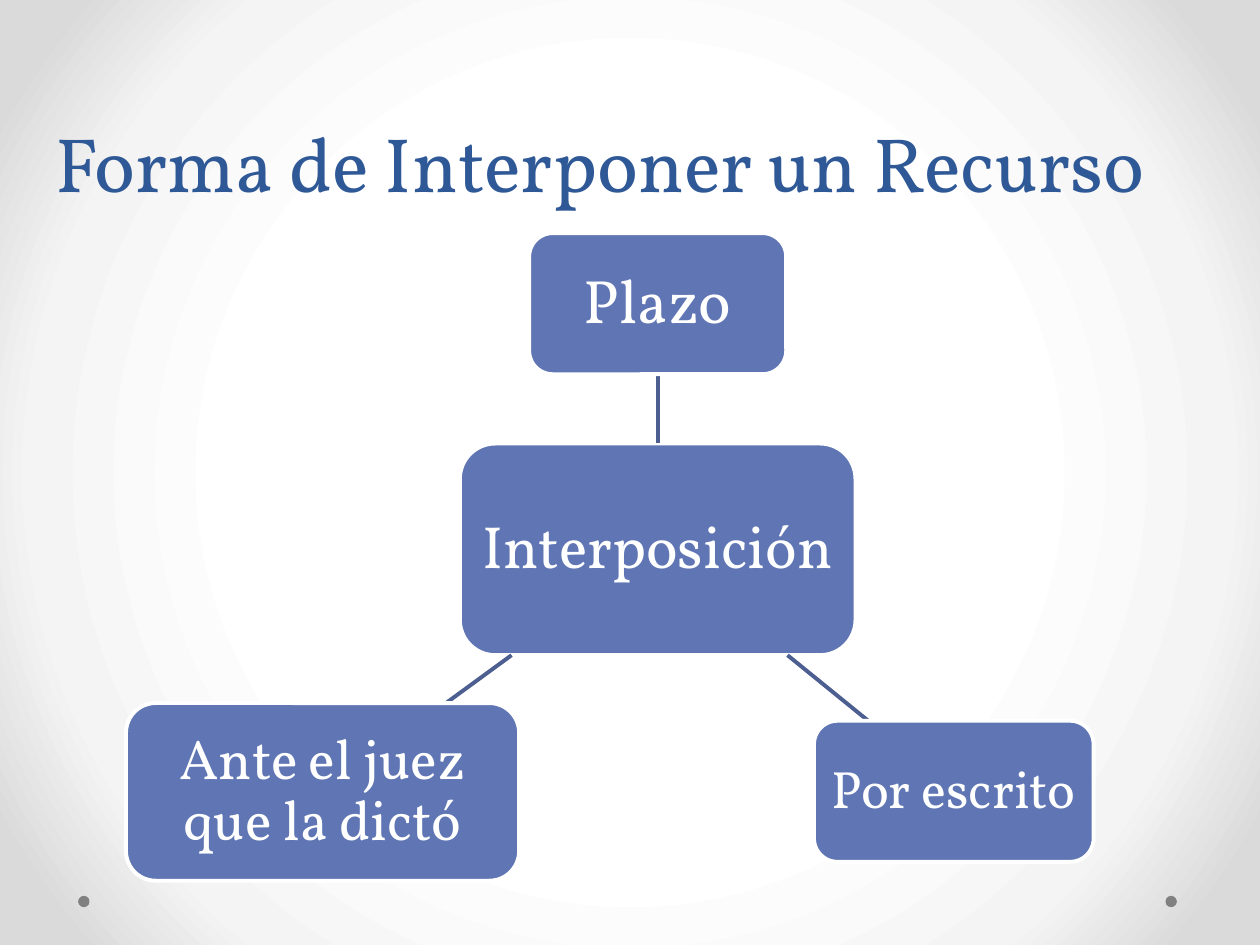
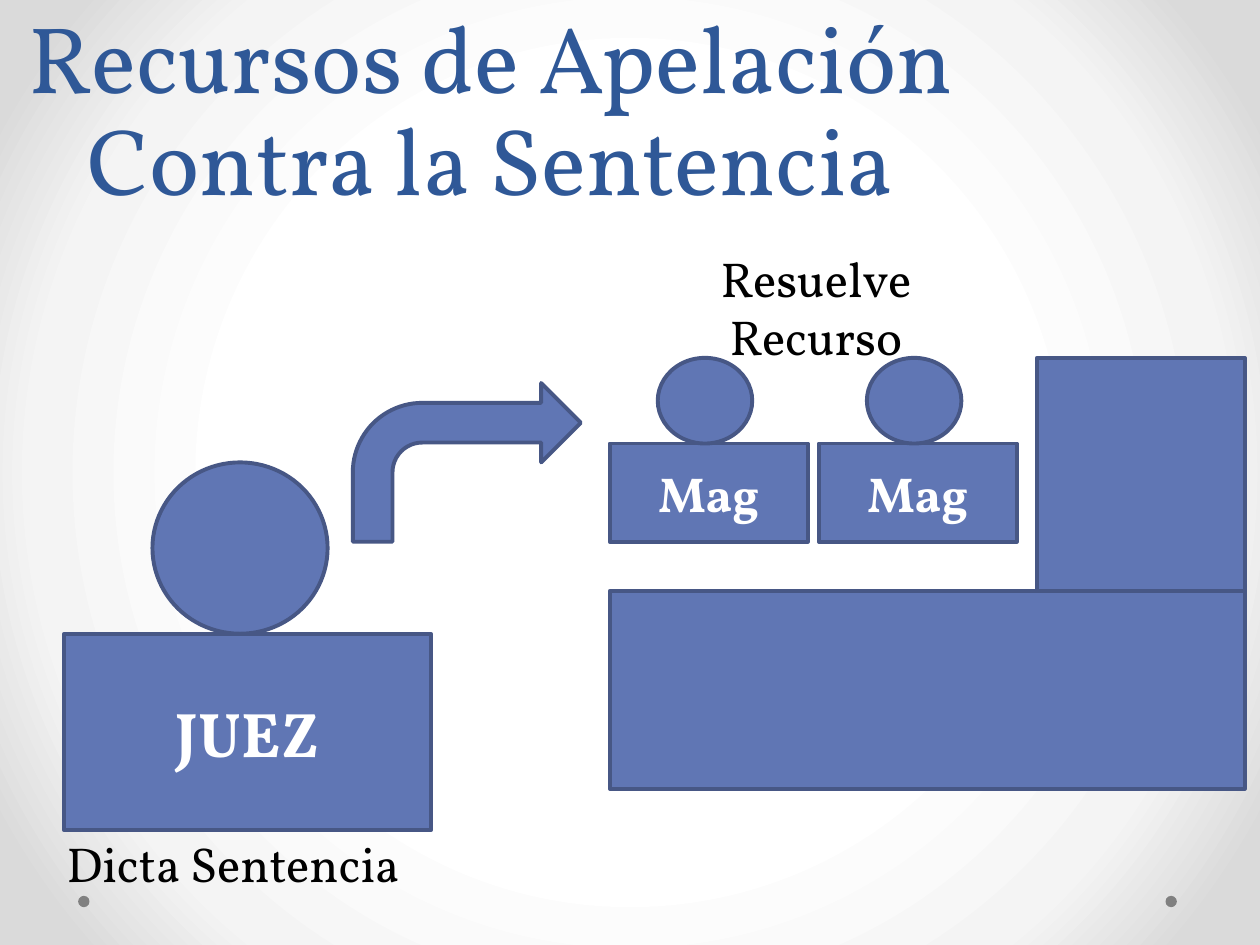
from lxml import etree
from pptx import Presentation
from pptx import util as u
from pptx.dml import color
from pptx.enum import shapes, text
from pptx.oxml import ns, parse_xml

PX = 9144
FONT = "Vollkorn"
BLUE, EDGE, LINK, TITLE = "6076B4", "475785", "4D5E90", "2F5897"
WHITE, BLACK, GREY = "FFFFFF", "000000", "808080"
GLOW = [(50, WHITE), (76, "F4F4F4"), (92, "DADADA")]
KIND = shapes.MSO_SHAPE


def px(*lengths):
    return [u.Emu(length * PX) for length in lengths]


def rgb(value):
    return color.RGBColor.from_string(value)


class Deck:
    """Holds the shared style and the slide being drawn."""

    def __init__(self):
        self.prs = Presentation()
        self.prs.slide_width, self.prs.slide_height = px(1000, 750)
        self.paint_background()

    def paint_background(self):
        fill = self.prs.slide_master.background.fill
        fill.solid()
        stops = "".join(
            f'<a:gs pos="{pos * 1000}"><a:srgbClr val="{tone}"/></a:gs>' for pos, tone in GLOW
        )
        glow = parse_xml(
            f'<a:gradFill {ns.nsdecls("a")} rotWithShape="1"><a:gsLst>{stops}</a:gsLst>'
            '<a:path path="circle"><a:fillToRect l="50000" t="50000" r="50000" b="50000"/>'
            "</a:path></a:gradFill>"
        )
        master = self.prs.slide_master.element
        solid = master.find(".//" + ns.qn("p:bgPr")).find(ns.qn("a:solidFill"))
        solid.getparent().replace(solid, glow)

    def start(self, title, box, size):
        self.slide = self.prs.slides.add_slide(self.prs.slide_layouts[5])
        for left in (62, 925):
            self.shape(KIND.OVAL, (left, 711, 9, 9), fill=GREY, edge=None)
        heading = self.slide.shapes.title
        heading.left, heading.top, heading.width, heading.height = px(*box)
        frame = heading.text_frame
        frame.auto_size = text.MSO_AUTO_SIZE.NONE
        frame.vertical_anchor = text.MSO_ANCHOR.BOTTOM
        self.label(frame, title, size, TITLE, spacing=u.Pt(58))

    def label(self, frame, words, size, tone, bold=False, spacing=None):
        frame.word_wrap = True
        paragraph = frame.paragraphs[0]
        paragraph.text = words
        paragraph.alignment = text.PP_ALIGN.CENTER
        paragraph.line_spacing = spacing
        font = paragraph.font
        font.name, font.size, font.bold = FONT, u.Pt(size), bold
        font.color.rgb = rgb(tone)

    def shape(self, kind, box, fill=BLUE, edge=EDGE):
        shape = self.slide.shapes.add_shape(kind, *px(*box))
        shape.shadow.inherit = False
        shape.fill.solid()
        shape.fill.fore_color.rgb = rgb(fill)
        if edge:
            shape.line.color.rgb = rgb(edge)
            shape.line.width = u.Pt(2.25)
        else:
            shape.line.fill.background()
        return shape

    def node(self, words, box, size):
        frame = self.shape(KIND.ROUNDED_RECTANGLE, box, edge=WHITE).text_frame
        frame.margin_left, frame.margin_top, frame.margin_right, frame.margin_bottom = px(8, 8, 8, 8)
        frame.vertical_anchor = text.MSO_ANCHOR.MIDDLE
        self.label(frame, words, size, WHITE, spacing=0.9)

    def link(self, *ends):
        link = self.slide.shapes.add_connector(shapes.MSO_CONNECTOR.STRAIGHT, *px(*ends))
        link.line.color.rgb = rgb(LINK)
        link.line.width = u.Pt(2.25)
        properties = link.element.find(ns.qn("p:spPr"))
        etree.SubElement(properties, ns.qn("a:effectLst"))

    def official(self, words, desk, head, size):
        left, top = desk[:2]
        offset, width, height = head
        frame = self.shape(KIND.RECTANGLE, desk).text_frame
        frame.vertical_anchor = text.MSO_ANCHOR.MIDDLE
        self.label(frame, words, size, WHITE, bold=True)
        self.shape(KIND.FLOWCHART_CONNECTOR, (left + offset, top - height, width, height))

    def caption(self, words, box):
        frame = self.slide.shapes.add_textbox(*px(*box)).text_frame
        self.label(frame, words, 28, BLACK)


def filing_slide(deck):
    deck.start("Forma de Interponer un Recurso", (4, 76, 945, 94), 44)
    deck.node("Interposición", (365, 352, 314, 168), 34)
    requirements = [
        ("Plazo", (420, 185, 204, 112), 35, (522, 352, 522, 298)),
        ("Por escrito", (646, 572, 222, 112), 30, (625, 520, 689, 572)),
        ("Ante el juez que la dictó", (100, 558, 312, 141), 32, (406, 520, 354, 558)),
    ]
    for words, box, size, ends in requirements:
        deck.link(*ends)
        deck.node(words, box, size)


def appeal_slide(deck):
    deck.start("Recursos de Apelación\vContra la Sentencia", (-12, 0, 803, 175), 54)
    deck.official("JUEZ", (51, 503, 291, 156), (70, 139, 136), 36)
    deck.caption("Dicta Sentencia", (12, 657, 346, 57))
    deck.shape(KIND.BENT_ARROW, (280, 304, 181, 126))
    for seat in range(2):
        deck.official("Mag", (484 + 166 * seat, 352, 157, 78), (38, 75, 68), 28)
    deck.shape(KIND.RECTANGLE, (484, 469, 504, 157))
    deck.shape(KIND.RECTANGLE, (823, 284, 165, 185))
    deck.caption("Resuelve Recurso", (520, 192, 255, 104))


def main():
    deck = Deck()
    filing_slide(deck)
    appeal_slide(deck)
    deck.prs.save("out.pptx")


if __name__ == "__main__":
    main()
